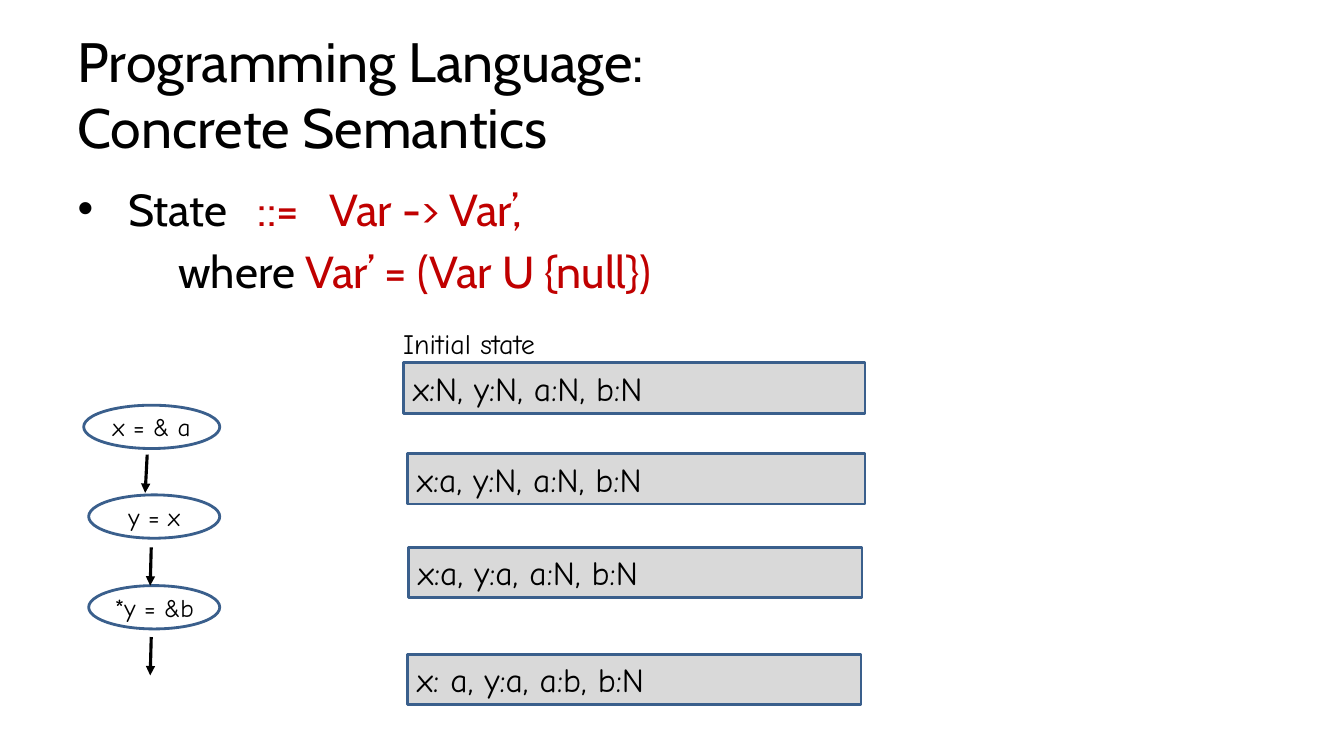
from dataclasses import dataclass

import pptx
import pptx.dml.color
import pptx.enum.shapes
import pptx.enum.text
import pptx.oxml.ns
import pptx.util
from lxml import etree

Inches = pptx.util.Inches
Pt = pptx.util.Pt
RGBColor = pptx.dml.color.RGBColor
MSO_SHAPE = pptx.enum.shapes.MSO_SHAPE
MSO_ANCHOR = pptx.enum.text.MSO_ANCHOR
MSO_AUTO_SIZE = pptx.enum.text.MSO_AUTO_SIZE
PP_ALIGN = pptx.enum.text.PP_ALIGN
qn = pptx.oxml.ns.qn

BLACK = RGBColor(0x00, 0x00, 0x00)
RED = RGBColor(0xC0, 0x00, 0x00)
GRAY = RGBColor(0xD9, 0xD9, 0xD9)
BLUE = RGBColor(0x3A, 0x5F, 0x8C)

TITLE_FONT = "Cabin"
LABEL_FONT = "Comic Neue"


@dataclass
class State:
    text: str
    left: float
    top: float
    width: float


@dataclass
class Statement:
    text: str
    left: float
    top: float
    width: float


@dataclass
class Arrow:
    x1: float
    x2: float
    top: float


STATES = [
    State("x:N, y:N, a:N, b:N", 4, 3.6, 4.58),
    State("x:a, y:N, a:N, b:N", 4.04, 4.5, 4.54),
    State("x:a, y:a, a:N, b:N", 4.05, 5.43, 4.5),
    State("x: a, y:a, a:b, b:N", 4.04, 6.49, 4.5),
]
STATEMENTS = [
    Statement("x = & a", 0.83, 4.02, 1.35),
    Statement("y = x", 0.88, 4.91, 1.3),
    Statement("*y = &b", 0.88, 5.81, 1.3),
]
ARROWS = [Arrow(1.46, 1.44, 4.51), Arrow(1.5, 1.49, 5.43), Arrow(1.5, 1.49, 6.32)]


def write(p, text: str, *, size: float, font: str = LABEL_FONT,
          color: RGBColor = BLACK, align=PP_ALIGN.LEFT) -> None:
    p.alignment = align
    for i, line in enumerate(text.split("\n")):
        if i:
            p.add_line_break()
        r = p.add_run()
        r.text = line
        r.font.size = Pt(size)
        r.font.name = font
        r.font.color.rgb = color


def place(sp, left: float, top: float, width: float, height: float) -> None:
    sp.left, sp.top = Inches(left), Inches(top)
    sp.width, sp.height = Inches(width), Inches(height)


def indent(p, left: float, first: float, bullet: str = "") -> None:
    p.space_before = Pt(6.4)
    pPr = p._p.get_or_add_pPr()
    pPr.set("marL", str(Inches(left)))
    pPr.set("indent", str(Inches(first)))
    if bullet:
        etree.SubElement(pPr, qn("a:buFont")).set("typeface", "Arial")
        etree.SubElement(pPr, qn("a:buChar")).set("char", bullet)
    else:
        etree.SubElement(pPr, qn("a:buNone"))


def add_outlined(slide, kind, left: float, top: float, width: float, height: float):
    sp = slide.shapes.add_shape(kind, Inches(left), Inches(top), Inches(width), Inches(height))
    sp.shadow.inherit = False
    sp.line.color.rgb = BLUE
    sp.line.width = Pt(2)
    sp.text_frame.vertical_anchor = MSO_ANCHOR.MIDDLE
    return sp


def add_state(slide, state: State) -> None:
    sp = add_outlined(slide, MSO_SHAPE.RECTANGLE, state.left, state.top, state.width, 0.5)
    sp.fill.solid()
    sp.fill.fore_color.rgb = GRAY
    write(sp.text_frame.paragraphs[0], state.text, size=24)


def add_statement(slide, statement: Statement) -> None:
    sp = add_outlined(slide, MSO_SHAPE.OVAL, statement.left, statement.top, statement.width, 0.43)
    sp.fill.background()
    tf = sp.text_frame
    tf.margin_left = tf.margin_right = tf.margin_top = tf.margin_bottom = 0
    write(tf.paragraphs[0], statement.text, size=18, align=PP_ALIGN.CENTER)


def add_arrow(slide, arrow: Arrow) -> None:
    cxn = slide.shapes.add_connector(
        pptx.enum.shapes.MSO_CONNECTOR.STRAIGHT,
        Inches(arrow.x1), Inches(arrow.top), Inches(arrow.x2), Inches(arrow.top + 0.38))
    cxn.line.color.rgb = BLACK
    cxn.line.width = Pt(2.25)
    etree.SubElement(cxn.line._get_or_add_ln(), qn("a:tailEnd")).set("type", "triangle")
    etree.SubElement(cxn._element.spPr, qn("a:effectLst"))


def add_heading(slide) -> None:
    title = slide.shapes.title
    place(title, 0.67, 0.3, 12, 1.25)
    tf = title.text_frame
    tf.auto_size = MSO_AUTO_SIZE.NONE
    tf.vertical_anchor = MSO_ANCHOR.MIDDLE
    write(tf.paragraphs[0], "Programming Language:\nConcrete Semantics",
          size=39.6, font=TITLE_FONT)


def add_definition(slide) -> None:
    body = slide.placeholders[1]
    place(body, 0.67, 1.75, 12, 1.65)
    tf = body.text_frame
    tf.auto_size = MSO_AUTO_SIZE.NONE
    p = tf.paragraphs[0]
    write(p, "State  ", size=32, font=TITLE_FONT)
    write(p, " ::=   Var -> Var’,", size=32, font=TITLE_FONT, color=RED)
    indent(p, 0.5, -0.5, "•")
    p = tf.add_paragraph()
    write(p, "where", size=32, font=TITLE_FONT)
    write(p, " Var’ = (Var U {null})", size=32, font=TITLE_FONT, color=RED)
    indent(p, 1, 0)


def main() -> None:
    prs = pptx.Presentation()
    prs.slide_width, prs.slide_height = Inches(13.33), Inches(7.5)
    slide = prs.slides.add_slide(prs.slide_layouts[1])
    add_heading(slide)
    add_definition(slide)
    for state in STATES:
        add_state(slide, state)
    label = slide.shapes.add_textbox(Inches(3.9), Inches(3.19), Inches(1.79), Inches(0.44))
    write(label.text_frame.paragraphs[0], "Initial state", size=20)
    for statement in STATEMENTS:
        add_statement(slide, statement)
    for arrow in ARROWS:
        add_arrow(slide, arrow)
    prs.save("out.pptx")


if __name__ == "__main__":
    main()
